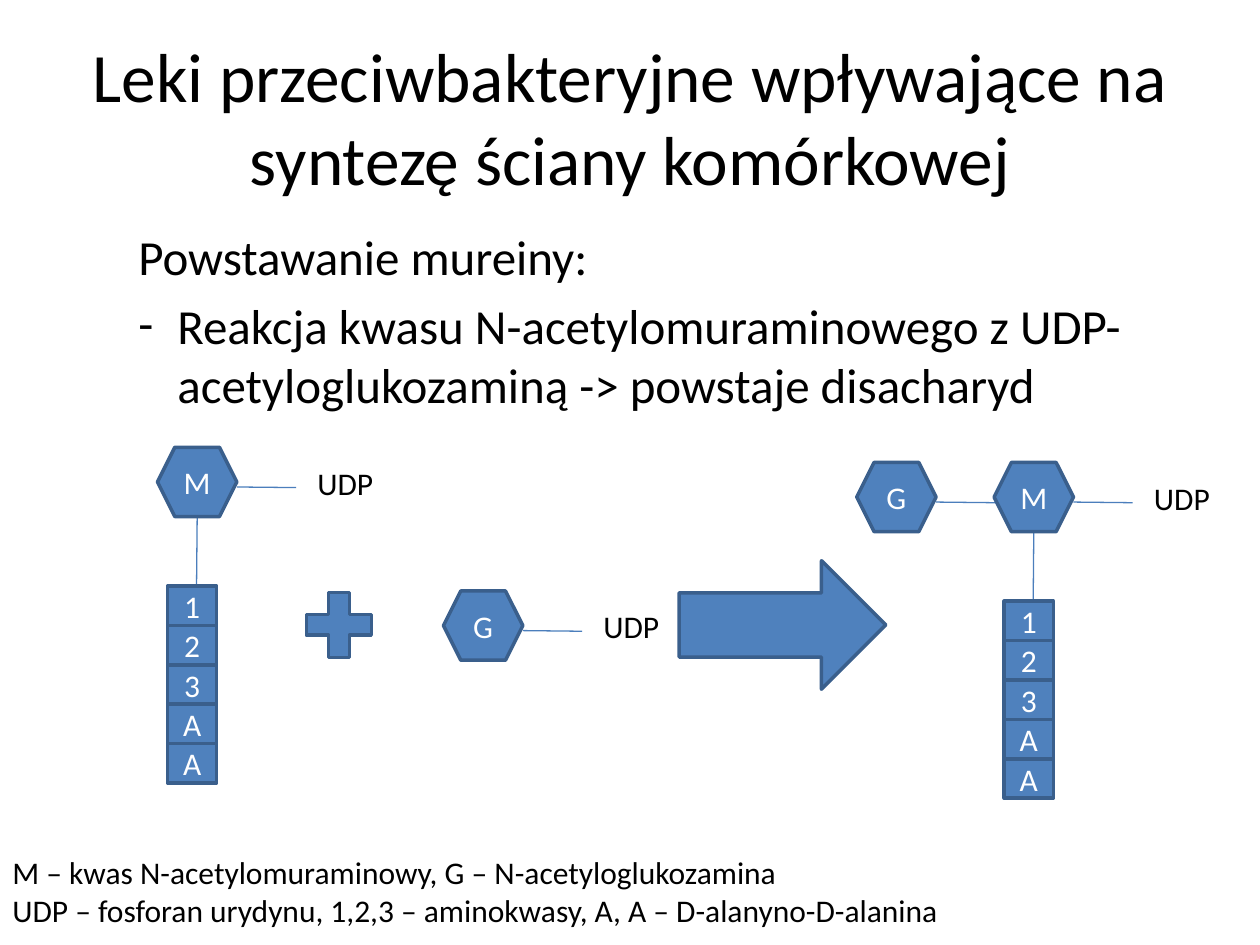
from lxml.etree import SubElement
from pptx import Presentation
from pptx.dml.color import RGBColor
from pptx.enum.shapes import MSO_CONNECTOR as CONNECTOR, MSO_SHAPE as SHAPE
from pptx.enum.text import MSO_ANCHOR as ANCHOR, PP_ALIGN as ALIGN
from pptx.oxml.ns import qn
from pptx.util import Inches, Pt

presentation = Presentation()
presentation.slide_width = Inches(10)
presentation.slide_height = Inches(7.5)
slide = presentation.slides.add_slide(presentation.slide_layouts[5])
column = presentation.slide_width / 100
row = presentation.slide_height / 75


def place(left, top, width, height):
    return [round(left * column), round(top * row), round(width * column), round(height * row)]


def write(paragraph, text, size, color):
    run = paragraph.add_run()
    run.text = text
    run.font.name = "Calibri"
    run.font.size = Pt(size)
    run.font.color.rgb = RGBColor.from_string(color)


title = slide.shapes.title
title.left, title.top, title.width, title.height = place(5, 3, 90, 12.5)
title.text_frame.vertical_anchor = ANCHOR.MIDDLE
title.text_frame.word_wrap = True
heading = title.text_frame.paragraphs[0]
heading.alignment = ALIGN.CENTER
write(heading, "Leki przeciwbakteryjne wpływające na syntezę ściany komórkowej", 39.6, "000000")

labels = [
    (place(5, 17.5, 90, 15.3), 28, True, [
        "Powstawanie mureiny:",
        "Reakcja kwasu N-acetylomuraminowego z UDP-acetyloglukozaminą -> powstaje disacharyd",
    ]),
    (place(0, 67.2, 98.4, 7.1), 18, True, [
        "M – kwas N-acetylomuraminowy, G – N-acetyloglukozamina",
        "UDP – fosforan urydynu, 1,2,3 – aminokwasy, A, A – D-alanyno-D-alanina",
    ]),
]
blocks = [
    (SHAPE.RIGHT_ARROW, place(53.9, 44.5, 16.4, 10.2), ""),
    (SHAPE.MATH_PLUS, place(23.4, 46.1, 7, 7), ""),
]
bonds = []

sugars = [
    ("M", 12.5, 35.5, True, True),
    ("G", 35.2, 46.9, True, False),
    ("G", 68, 36.7, False, False),
    ("M", 78.9, 36.7, True, True),
]
for letter, left, top, has_udp, has_peptide in sugars:
    blocks.append((SHAPE.HEXAGON, place(left, top, 6.3, 5.5), letter))
    bonds.append(place(left + 6.3, top + 3.15, left + 11, top + 3.2))
    if has_udp:
        labels.append((place(left + 11.7, top + 0.8, 6.5, 4), 18, False, ["UDP"]))
    if has_peptide:
        bonds.append(place(left + 3.15, top + 5.5, left + 3.1, top + 11))
        for index, residue in enumerate("123AA"):
            box = place(left + 0.8, top + 11 + index * 3.13, 3.9, 3.13)
            blocks.append((SHAPE.RECTANGLE, box, residue))

for begin_x, begin_y, end_x, end_y in bonds:
    bond = slide.shapes.add_connector(CONNECTOR.STRAIGHT, begin_x, begin_y, end_x, end_y)
    bond.line.color.rgb = RGBColor.from_string("4B7EBC")
    bond.line.width = Pt(0.75)
    SubElement(bond.element.spPr, qn("a:effectLst"))

for kind, box, text in blocks:
    shape = slide.shapes.add_shape(kind, *box)
    shape.shadow.inherit = False
    shape.fill.solid()
    shape.fill.fore_color.rgb = RGBColor.from_string("4F81BD")
    shape.line.color.rgb = RGBColor.from_string("3A5F8C")
    shape.line.width = Pt(2)
    if text:
        shape.text_frame.vertical_anchor = ANCHOR.MIDDLE
        paragraph = shape.text_frame.paragraphs[0]
        paragraph.alignment = ALIGN.CENTER
        write(paragraph, text, 18, "FFFFFF")

text_frames = []
for box, size, wraps, lines in labels:
    frame = slide.shapes.add_textbox(*box).text_frame
    frame.word_wrap = wraps
    text_frames.append(frame)
    for index, line in enumerate(lines):
        paragraph = frame.add_paragraph() if index else frame.paragraphs[0]
        write(paragraph, line, size, "000000")

for paragraph in text_frames[0].paragraphs:
    paragraph.space_before = Pt(5.6)
    properties = paragraph._p.get_or_add_pPr()
    properties.set("marL", str(Inches(0.81)))
    properties.set("indent", str(Inches(-0.31)))
SubElement(properties, qn("a:buFont")).set("typeface", "Calibri")
SubElement(properties, qn("a:buChar")).set("char", "-")

presentation.save("out.pptx")
